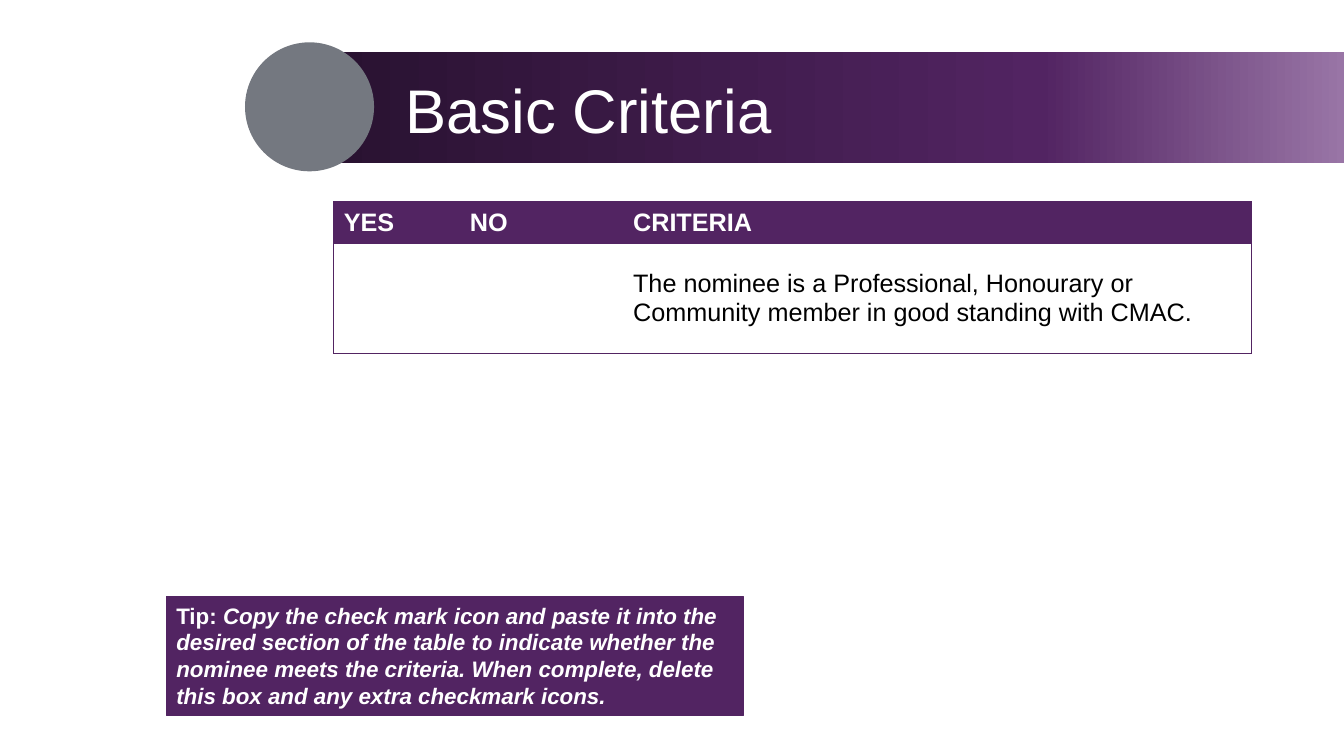
from copy import deepcopy

from lxml import etree
from pptx import Presentation
from pptx.dml.color import RGBColor
from pptx.enum.shapes import MSO_SHAPE
from pptx.enum.text import MSO_ANCHOR, PP_ALIGN
from pptx.oxml.ns import qn
from pptx.util import Inches, Pt

RECTANGLE, OVAL = MSO_SHAPE.RECTANGLE, MSO_SHAPE.OVAL
TOP, MIDDLE = MSO_ANCHOR.TOP, MSO_ANCHOR.MIDDLE
LEFT = PP_ALIGN.LEFT

PURPLE = RGBColor(0x52, 0x24, 0x62)
DARK_PURPLE = RGBColor(0x29, 0x12, 0x31)
LIGHT_PURPLE = RGBColor(0x99, 0x75, 0xA6)
GREY = RGBColor(0x74, 0x78, 0x80)
WHITE = RGBColor(0xFF, 0xFF, 0xFF)
BLACK = RGBColor(0x00, 0x00, 0x00)

FONT = "Arial"
TITLE_ONLY = 5
BAND_STOPS = [(0, DARK_PURPLE), (0.7, PURPLE), (1, LIGHT_PURPLE)]
CRITERIA_ROWS = [
    [["YES"], ["NO"], ["CRITERIA"]],
    [[], [], ["The nominee is a Professional, Honourary or",
              "Community member in good standing with CMAC."]],
]
TIP = ("Copy the check mark icon and paste it into the desired section of the "
       "table to indicate whether the nominee meets the criteria. When complete, "
       "delete this box and any extra checkmark icons.")


def add_text(paragraph, text, size=18, color=WHITE, bold=False, italic=False):
    """Add a formatted run to a left-aligned paragraph."""
    paragraph.alignment = LEFT
    run = paragraph.add_run()
    run.text = text
    font = run.font
    font.name, font.size, font.bold, font.italic = FONT, Pt(size), bold, italic
    font.color.rgb = color


def set_borders(cell, visible_sides):
    """Draw the named cell sides in purple and hide the others."""
    properties = cell._tc.get_or_add_tcPr()
    for side in "LRTB":
        line = etree.SubElement(properties, qn(f"a:ln{side}"), w=str(Pt(1)))
        if side in visible_sides:
            fill = etree.SubElement(line, qn("a:solidFill"))
            etree.SubElement(fill, qn("a:srgbClr"), val=str(PURPLE))
        else:
            etree.SubElement(line, qn("a:noFill"))


class CriteriaSlide:
    """Hold the current slide and draw its elements in one style."""

    def __init__(self, presentation):
        """Add a slide with a title placeholder."""
        self.slide = presentation.slides.add_slide(
            presentation.slide_layouts[TITLE_ONLY])
        self.shapes = self.slide.shapes

    def add_box(self, kind, left, top, width, height, color=None):
        """Add a preset shape without shadow or outline."""
        shape = self.shapes.add_shape(
            kind, Inches(left), Inches(top), Inches(width), Inches(height))
        shape.shadow.inherit = False
        shape.line.fill.background()
        if color is not None:
            shape.fill.solid()
            shape.fill.fore_color.rgb = color
        return shape

    def add_band(self, left, top, width, height):
        """Add the title band with its three-stop gradient."""
        band = self.add_box(RECTANGLE, left, top, width, height)
        band.fill.gradient()
        band.fill.gradient_angle = 0
        stop_list = band._element.spPr.find(f".//{qn('a:gsLst')}")
        stop_list.append(deepcopy(stop_list[0]))
        for stop, (position, color) in zip(band.fill.gradient_stops, BAND_STOPS):
            stop.position = position
            stop.color.rgb = color

    def add_title(self, text, left, top, width, height):
        """Fill the title placeholder and bring it to the front."""
        title = self.shapes.title
        title.left, title.top = Inches(left), Inches(top)
        title.width, title.height = Inches(width), Inches(height)
        title.text_frame.vertical_anchor = MIDDLE
        paragraph = title.text_frame.paragraphs[0]
        paragraph.line_spacing = 0.9
        add_text(paragraph, text, size=44)
        self.shapes._spTree.append(title._element)

    def add_criteria_table(self, left, top, column_widths, row_heights):
        """Add the criteria table with a purple header and outer frame."""
        last_row, last_column = len(row_heights) - 1, len(column_widths) - 1
        table = self.shapes.add_table(
            len(row_heights), len(column_widths), Inches(left), Inches(top),
            Inches(sum(column_widths)), Inches(sum(row_heights))).table
        for column, width in zip(table.columns, column_widths):
            column.width = Inches(width)
        for row_index, height in enumerate(row_heights):
            table.rows[row_index].height = Inches(height)
            header = row_index == 0
            for column_index, lines in enumerate(CRITERIA_ROWS[row_index]):
                cell = table.cell(row_index, column_index)
                sides = "T"
                sides += "L" if column_index == 0 else ""
                sides += "R" if column_index == last_column else ""
                sides += "B" if row_index == last_row else ""
                set_borders(cell, sides)
                cell.fill.solid()
                cell.fill.fore_color.rgb = PURPLE if header else WHITE
                cell.vertical_anchor = MIDDLE
                frame = cell.text_frame
                for index, line in enumerate(lines):
                    paragraph = frame.add_paragraph() if index else frame.paragraphs[0]
                    add_text(paragraph, line, bold=header,
                             color=WHITE if header else BLACK)

    def add_tip(self, left, top, width, height):
        """Add the purple tip box."""
        box = self.add_box(RECTANGLE, left, top, width, height, PURPLE)
        box.line.color.rgb = PURPLE
        box.line.width = Pt(0.75)
        box.text_frame.word_wrap = True
        box.text_frame.vertical_anchor = TOP
        paragraph = box.text_frame.paragraphs[0]
        add_text(paragraph, "Tip: ", size=16, bold=True)
        add_text(paragraph, TIP, size=16, bold=True, italic=True)


def main():
    """Build and save the presentation."""
    presentation = Presentation()
    presentation.slide_width, presentation.slide_height = Inches(13.33), Inches(7.5)
    slide = CriteriaSlide(presentation)
    slide.add_band(3.31, 0.52, 10.02, 1.1)
    slide.add_box(OVAL, 2.43, 0.42, 1.28, 1.28, GREY)
    slide.add_title("Basic Criteria", 3.92, 0.4, 8.5, 1.45)
    slide.add_criteria_table(3.31, 2, [1.25, 1.62, 6.23], [0.41, 1.1])
    slide.add_tip(1.65, 5.92, 5.72, 1.18)
    presentation.save("out.pptx")


if __name__ == "__main__":
    main()
